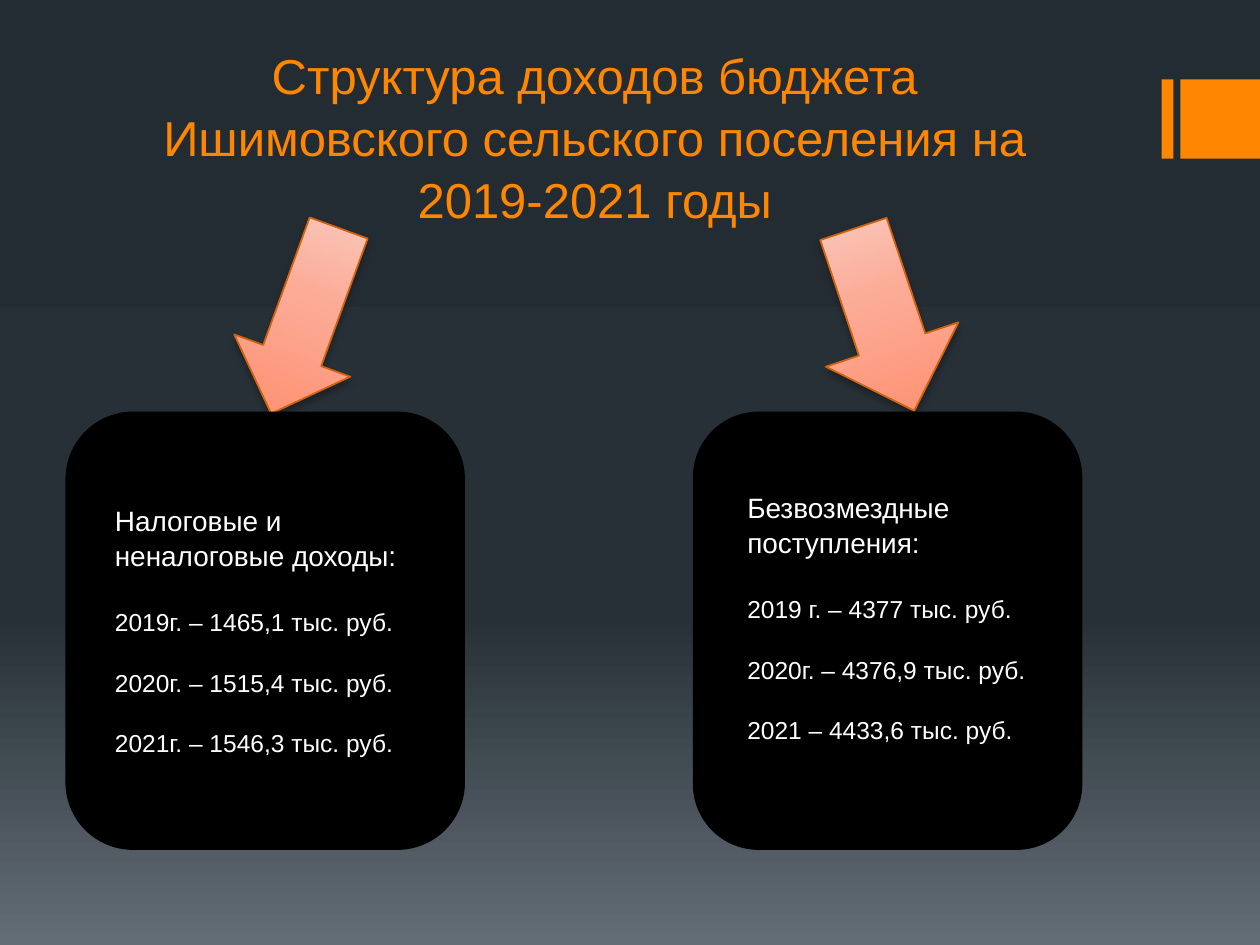
from copy import deepcopy
from dataclasses import dataclass

from lxml.etree import SubElement
from pptx import Presentation
from pptx.dml.color import RGBColor
from pptx.enum.shapes import MSO_SHAPE as Preset
from pptx.enum.text import MSO_ANCHOR as Anchor, PP_ALIGN as Align
from pptx.oxml.ns import qn
from pptx.util import Inches, Pt


@dataclass(frozen=True)
class Theme:
    """Colours, type sizes and gradients of the slide."""
    font: str = "Arial"
    accent: str = "FF8600"
    card: str = "000000"
    body: str = "FFFFFF"
    arrow_edge: str = "D2610C"
    backdrop: tuple = ((0, "242C33"), (0.65, "273037"), (1, "636D76"))
    arrow: tuple = ((0, "F9CDC2"), (0.41, "FCAB97"), (1, "FF8C6A"))
    title_size: int = 28
    heading_size: int = 16
    amount_size: int = 14
    leading: float = 1.05


@dataclass(frozen=True)
class Box:
    """A rectangle in inches."""
    left: float
    top: float
    width: float
    height: float

    def inner(self, x, y, width, height):
        """Return the inner box given as shares of this one."""
        return Box(self.left + x * self.width, self.top + y * self.height,
                   width * self.width, height * self.height)

    def place(self):
        """Return left, top, width and height as lengths."""
        return [Inches(v) for v in (self.left, self.top, self.width, self.height)]


THEME = Theme()
PAGE = Box(0, 0, 10, 7.5)


def paint_gradient(fill, owner, stops):
    """Fill from top to bottom through three stops."""
    fill.gradient()
    fill.gradient_angle = 270
    stop_list = next(owner.iter(qn("a:gsLst")))
    stop_list.append(deepcopy(stop_list[0]))
    for stop, (position, colour) in zip(fill.gradient_stops, stops):
        stop.position = position
        stop.color.rgb = RGBColor.from_string(colour)


def add_solid(slide, box, preset, colour):
    """Add a plain shape of one colour without an outline."""
    solid = slide.shapes.add_shape(preset, *box.place())
    solid.shadow.inherit = False
    solid.fill.solid()
    solid.fill.fore_color.rgb = RGBColor.from_string(colour)
    solid.line.fill.background()
    return solid


def add_line(paragraph, text, size, colour):
    """Write one run into a paragraph."""
    paragraph.line_spacing = THEME.leading
    run = paragraph.add_run()
    run.text = text
    run.font.name = THEME.font
    run.font.size = Pt(size)
    run.font.color.rgb = RGBColor.from_string(colour)


def add_frame(slide, box):
    """Add a wrapping text frame."""
    frame = slide.shapes.add_textbox(*box.place()).text_frame
    frame.word_wrap = True
    return frame


def add_title(slide, box, text):
    """Place the centred title at the foot of its box."""
    frame = add_frame(slide, box)
    frame.vertical_anchor = Anchor.BOTTOM
    frame.paragraphs[0].alignment = Align.CENTER
    add_line(frame.paragraphs[0], text, THEME.title_size, THEME.accent)


def add_edge_marks(slide, box):
    """Place the thin bar and the square at the page edge."""
    for x, width in ((0, 0.12), (0.19, 0.81)):
        add_solid(slide, box.inner(x, 0, width, 1), Preset.RECTANGLE, THEME.accent)


def add_arrow(slide, box, rotation):
    """Place a tilted gradient arrow with a soft shadow."""
    arrow = slide.shapes.add_shape(Preset.DOWN_ARROW, *box.place())
    arrow.rotation = rotation
    paint_gradient(arrow.fill, arrow.element, THEME.arrow)
    arrow.line.color.rgb = RGBColor.from_string(THEME.arrow_edge)
    arrow.line.width = Pt(1)
    arrow.shadow.inherit = False
    effects = arrow.element.spPr.find(qn("a:effectLst"))
    shadow = SubElement(effects, qn("a:outerShdw"), blurRad=str(Pt(4)),
                        dist=str(Pt(3)), dir="5400000", rotWithShape="0")
    tint = SubElement(shadow, qn("a:srgbClr"), val="000000")
    SubElement(tint, qn("a:alpha"), val="28000")


def add_card(slide, box, text_box, heading, amounts):
    """Place a rounded card with its heading and yearly amounts."""
    card = add_solid(slide, box, Preset.ROUNDED_RECTANGLE, THEME.card)
    card.line.color.rgb = RGBColor.from_string(THEME.card)
    card.line.width = Pt(1.5)
    frame = add_frame(slide, text_box)
    add_line(frame.paragraphs[0], heading, THEME.heading_size, THEME.body)
    gap = THEME.heading_size
    for amount in amounts:
        paragraph = frame.add_paragraph()
        paragraph.space_before = Pt(gap * 1.2)
        add_line(paragraph, amount, THEME.amount_size, THEME.body)
        gap = THEME.amount_size


def build_slide(slide, page):
    """Compose the income structure slide."""
    paint_gradient(slide.background.fill, slide.element, THEME.backdrop)
    add_edge_marks(slide, page.inner(0.922, 0.084, 0.078, 0.084))
    add_title(slide, page.inner(0.106, 0.039, 0.732, 0.209),
              "Структура доходов бюджета Ишимовского сельского поселения на 2019-2021 годы")
    add_arrow(slide, page.inner(0.193, 0.235, 0.098, 0.209), 20)
    add_arrow(slide, page.inner(0.646, 0.237, 0.111, 0.203), 341.5)
    own_income = page.inner(0.053, 0.437, 0.315, 0.461)
    add_card(slide, own_income, own_income.inner(0.09, 0.19, 0.775, 0.68),
             "Налоговые и неналоговые доходы:",
             ("2019г. – 1465,1 тыс. руб.", "2020г. – 1515,4 тыс. руб.",
              "2021г. – 1546,3 тыс. руб."))
    grants = page.inner(0.551, 0.437, 0.307, 0.461)
    add_card(slide, grants, grants.inner(0.105, 0.16, 0.795, 0.6),
             "Безвозмездные поступления:",
             ("2019 г. – 4377 тыс. руб.", "2020г. – 4376,9 тыс. руб.",
              "2021 – 4433,6 тыс. руб."))


def main():
    """Build and save the presentation."""
    deck = Presentation()
    deck.slide_width, deck.slide_height = Inches(PAGE.width), Inches(PAGE.height)
    build_slide(deck.slides.add_slide(deck.slide_layouts[6]), PAGE)
    deck.save("out.pptx")


if __name__ == "__main__":
    main()
